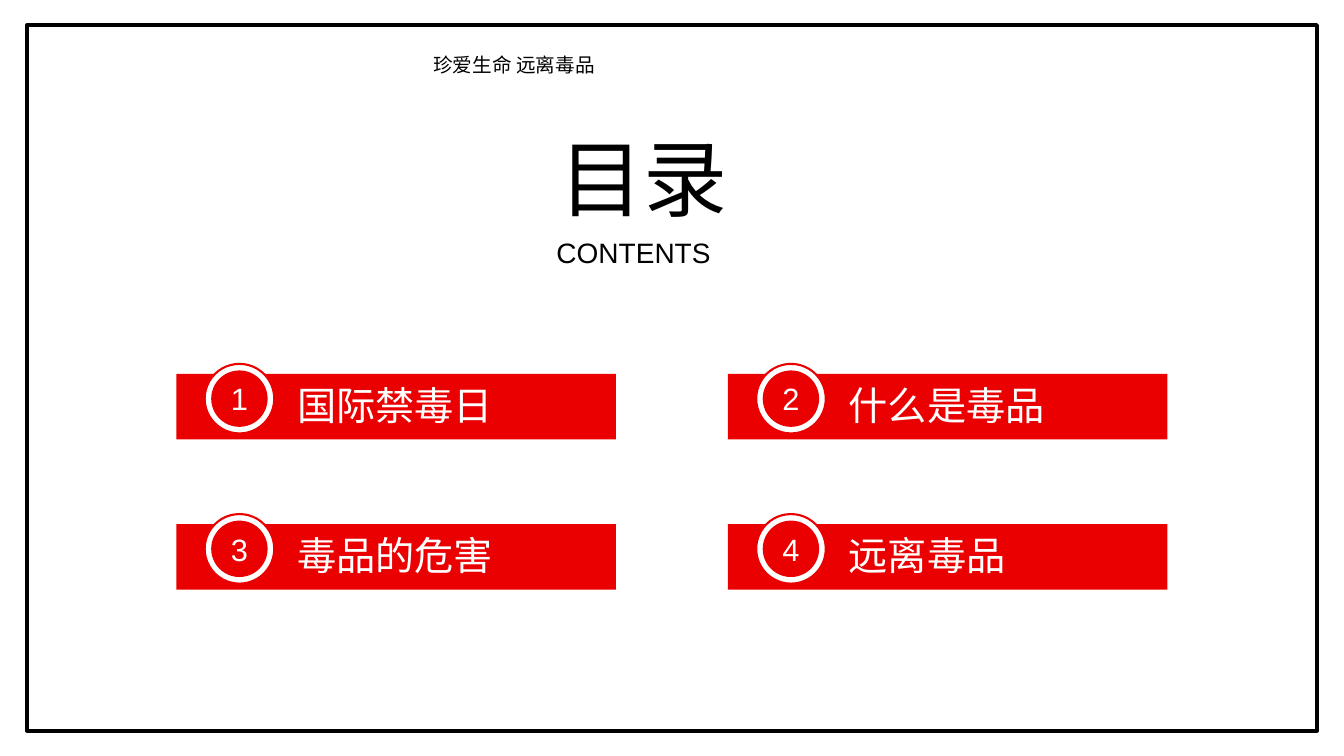
from lxml import etree
from pptx import Presentation
from pptx.dml.color import RGBColor as RGB
from pptx.enum.shapes import MSO_SHAPE as Kind
from pptx.enum.text import MSO_ANCHOR as Anchor, MSO_AUTO_SIZE as Fit, PP_ALIGN as Align
from pptx.oxml.ns import qn
from pptx.util import Inches, Pt

COLORS = {"red": "EA0000", "white": "FFFFFF", "black": "000000"}
HAN = "Noto Sans CJK SC"
TOPICS = ["国际禁毒日", "什么是毒品", "毒品的危害", "远离毒品"]

deck = Presentation()
deck.slide_width, deck.slide_height = Inches(13.33), Inches(7.5)
slide = deck.slides.add_slide(deck.slide_layouts[6])


def draw(kind, x, y, w, h, fill=None, line=None, width=0):
    shape = slide.shapes.add_shape(kind, Inches(x), Inches(y), Inches(w), Inches(h))
    shape.shadow.inherit = False
    if fill:
        shape.fill.solid()
        shape.fill.fore_color.rgb = RGB.from_string(COLORS[fill])
    else:
        shape.fill.background()
    if line:
        shape.line.color.rgb = RGB.from_string(COLORS[line])
        shape.line.width = Pt(width)
    else:
        shape.line.fill.background()
    return shape


def write(text, size, font, color, box, shape=None):
    """Fill the given shape with centred text, or a new text box with justified text."""
    host = shape or slide.shapes.add_textbox(*[Inches(n) for n in box])
    frame = host.text_frame
    frame.text = text
    frame.word_wrap = True
    if shape:
        frame.vertical_anchor = Anchor.MIDDLE
    else:
        frame.auto_size = Fit.SHAPE_TO_FIT_TEXT
    para = frame.paragraphs[0]
    para.alignment = Align.CENTER if shape else Align.JUSTIFY
    run = para.runs[0]
    run.font.size = Pt(size)
    run.font.color.rgb = RGB.from_string(COLORS[color])
    run.font.name = font
    etree.SubElement(run.font._element, qn("a:ea")).set("typeface", font)


draw(Kind.RECTANGLE, 0.27, 0.25, 12.79, 7, line="black", width=3)

for i, topic in enumerate(TOPICS):
    row, col = divmod(i, 2)
    x, y = 1.75 + 5.47 * col, 3.71 + 1.49 * row
    draw(Kind.RECTANGLE, x, y, 4.36, 0.65, fill="red")
    write(topic, 28, HAN, "white", (x + 1.1, y + 0.02, 2.53, 0.57))
    draw(Kind.OVAL, x + 0.28, y - 0.1, 0.69, 0.69, fill="white", line="red", width=1.5)
    disc = draw(Kind.OVAL, x + 0.345, y - 0.035, 0.56, 0.56, fill="red")
    write(str(i + 1), 22, "Arial", "white", None, disc)

write("目录", 60, HAN, "black", (5.45, 1.21, 2.44, 1.11))
write("CONTENTS", 20, "Arial", "black", (5.42, 2.29, 2.5, 0.44))
write("珍爱生命 远离毒品", 14, HAN, "black", (4.2, 0.48, 4.93, 0.34))

deck.save("out.pptx")
